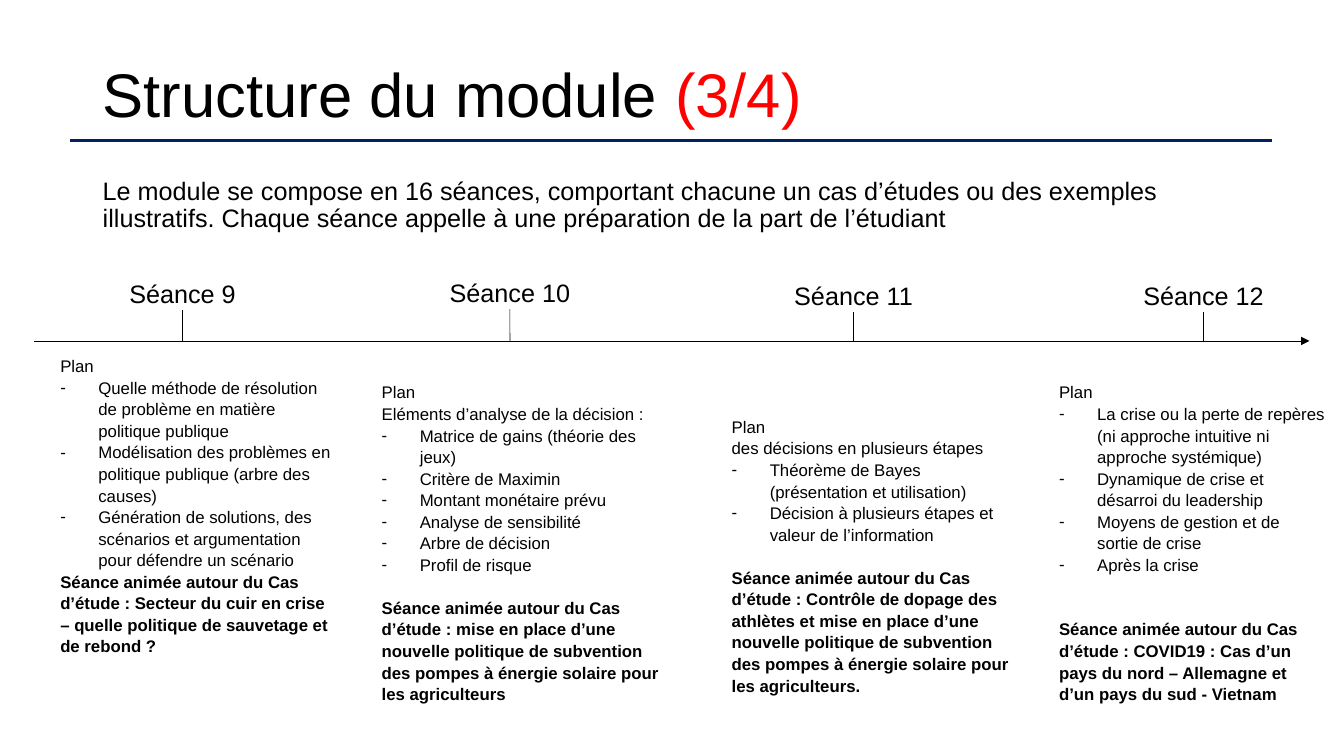
from dataclasses import dataclass

from lxml import etree
from pptx import Presentation
from pptx.dml.color import RGBColor
from pptx.enum.shapes import MSO_CONNECTOR as LINE
from pptx.enum.text import MSO_ANCHOR as ANCHOR, PP_ALIGN as ALIGN
from pptx.oxml.ns import qn
from pptx.util import Cm, Pt


@dataclass(frozen=True)
class Theme:
    font: str = "Arial"
    ink: str = "000000"
    accent: str = "FF0000"
    rule: str = "002060"
    title: int = 44
    body: int = 18
    plan: int = 12
    rule_width: float = 2.5
    axis_width: float = 0.5


THEME = Theme()

# Content
TITLE = [("Structure du module ", THEME.ink), ("(3/4)", THEME.accent)]
INTRO = ("Le module se compose en 16 séances, comportant chacune un cas d’études "
         "ou des exemples illustratifs. Chaque séance appelle à une préparation "
         "de la part de l’étudiant")
SESSIONS = [
    dict(name="Séance 9", intro=["Plan"],
         points=["Quelle méthode de résolution de problème en matière politique publique",
                 "Modélisation des problèmes en politique publique (arbre des causes)",
                 "Génération de solutions, des scénarios et argumentation pour "
                 "défendre un scénario"],
         case="Séance animée autour du Cas d’étude : Secteur du cuir en crise – "
              "quelle politique de sauvetage et de rebond ?",
         center=4.6, label_top=6.96, left=1.27, top=8.81, width=7.49, gap_lines=0),
    dict(name="Séance 10", intro=["Plan", "Eléments d’analyse de la décision :"],
         points=["Matrice de gains (théorie des jeux)", "Critère de Maximin",
                 "Montant monétaire prévu", "Analyse de sensibilité",
                 "Arbre de décision", "Profil de risque"],
         case="Séance animée autour du Cas d’étude : mise en place d’une nouvelle "
              "politique de subvention des pompes à énergie solaire pour les agriculteurs",
         center=12.85, label_top=6.93, left=9.37, top=9.47, width=7.49, gap_lines=1),
    dict(name="Séance 11", intro=["Plan", "des décisions en plusieurs étapes"],
         points=["Théorème de Bayes (présentation et utilisation)",
                 "Décision à plusieurs étapes et valeur de l’information"],
         case="Séance animée autour du Cas d’étude : Contrôle de dopage des athlètes "
              "et mise en place d’une nouvelle politique de subvention des pompes à "
              "énergie solaire pour les agriculteurs.",
         center=21.51, label_top=7.01, left=18.19, top=10.34, width=7.49, gap_lines=1),
    dict(name="Séance 12", intro=["Plan"],
         points=["La crise ou la perte de repères (ni approche intuitive ni approche "
                 "systémique)",
                 "Dynamique de crise et désarroi du leadership",
                 "Moyens de gestion et de sortie de crise", "Après la crise"],
         case="Séance animée autour du Cas d’étude : COVID19 : Cas d’un pays du nord – "
              "Allemagne et d’un pays du sud - Vietnam",
         center=30.33, label_top=7.01, left=26.44, top=9.47, width=7.21, gap_lines=2),
]

# Layout, in cm
HEAD_LEFT, HEAD_WIDTH, HEAD_HEIGHT = 2.34, 29.21, 2.46
AXIS_Y = 8.59
LABEL_WIDTH, LABEL_HEIGHT = 4.37, 0.86
PLAN_HEIGHT = 8
INDENT = 0.96
LINE_PT = 15.4


def add_box(s, left, top, width, height, anchor=ANCHOR.TOP):
    sp = s.shapes.add_textbox(Cm(left), Cm(top), Cm(width), Cm(height))
    sp.text_frame.word_wrap = True
    sp.text_frame.vertical_anchor = anchor
    return sp


def add_run(p, text, size, color=THEME.ink, bold=False):
    r = p.add_run()
    r.text = text
    r.font.name, r.font.size, r.font.bold = THEME.font, Pt(size), bold
    r.font.color.rgb = RGBColor.from_string(color)


def add_line(s, x1, y1, x2, y2, color, width):
    line = s.shapes.add_connector(LINE.STRAIGHT, Cm(x1), Cm(y1), Cm(x2), Cm(y2))
    line.line.color.rgb = RGBColor.from_string(color)
    line.line.width = Pt(width)
    etree.SubElement(line._element.spPr, qn("a:effectLst"))
    return line


def set_dash(p):
    pPr = p._p.get_or_add_pPr()
    pPr.set("marL", str(Cm(INDENT)))
    pPr.set("indent", str(-Cm(INDENT)))
    etree.SubElement(pPr, qn("a:buFont")).set("typeface", THEME.font)
    etree.SubElement(pPr, qn("a:buChar")).set("char", "-")


def add_plan(s, session):
    tf = add_box(s, session["left"], session["top"], session["width"], PLAN_HEIGHT).text_frame
    rows = [(text, "intro") for text in session["intro"]]
    rows += [(text, "point") for text in session["points"]]
    rows.append((session["case"], "case"))
    for i, (text, role) in enumerate(rows):
        p = tf.add_paragraph() if i else tf.paragraphs[0]
        p.line_spacing = 1.07
        if role == "point":
            set_dash(p)
        elif role == "case":
            p.space_before = Pt(LINE_PT * session["gap_lines"])
        add_run(p, text, THEME.plan, bold=role == "case")


def add_session(s, session):
    label = add_box(s, session["center"] - LABEL_WIDTH / 2, session["label_top"],
                    LABEL_WIDTH, LABEL_HEIGHT, ANCHOR.MIDDLE)
    tf = label.text_frame
    tf.margin_top = tf.margin_bottom = 0
    p = tf.paragraphs[0]
    p.alignment = ALIGN.CENTER
    add_run(p, session["name"], THEME.body)
    tick = add_line(s, session["center"], session["label_top"] + LABEL_HEIGHT,
                    session["center"], AXIS_Y, THEME.ink, THEME.axis_width)
    tick.begin_connect(label, 2)
    add_plan(s, session)


def main():
    prs = Presentation()
    prs.slide_width, prs.slide_height = Cm(33.87), Cm(19.05)
    s = prs.slides.add_slide(prs.slide_layouts[6])

    # Title, rule and introduction
    add_line(s, 1.77, 3.54, 32.05, 3.54, THEME.rule, THEME.rule_width)
    heads = [(0.97, ANCHOR.BOTTOM, TITLE, THEME.title),
             (3.96, ANCHOR.MIDDLE, [(INTRO, THEME.ink)], THEME.body)]
    for top, anchor, runs, size in heads:
        sp = add_box(s, HEAD_LEFT, top, HEAD_WIDTH, HEAD_HEIGHT, anchor)
        p = sp.text_frame.paragraphs[0]
        p.line_spacing = 0.9
        for text, color in runs:
            add_run(p, text, size, color)

    # Timeline
    axis = add_line(s, 0.86, AXIS_Y, 33, AXIS_Y, THEME.ink, THEME.axis_width)
    etree.SubElement(axis.line._get_or_add_ln(), qn("a:tailEnd")).set("type", "triangle")
    for session in SESSIONS:
        add_session(s, session)

    prs.save("out.pptx")


if __name__ == "__main__":
    main()
